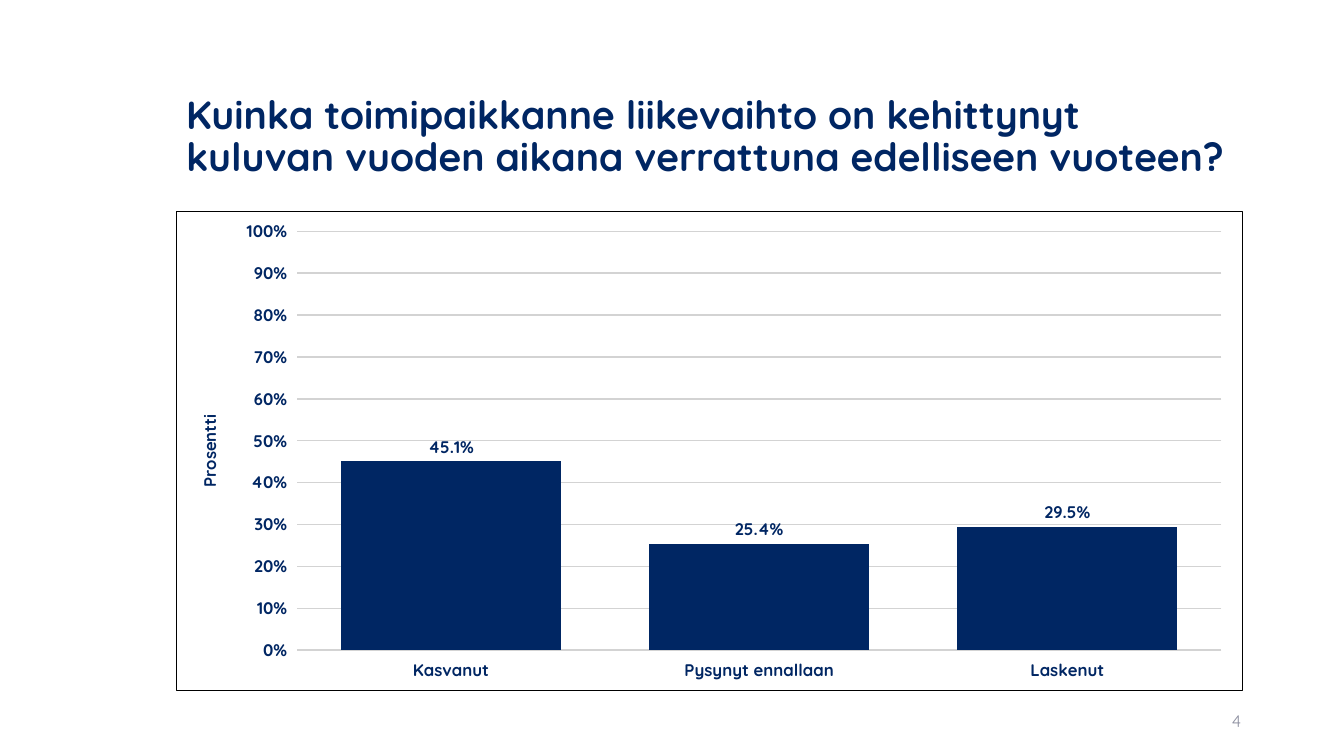
from lxml.etree import fromstring
from pptx import Presentation
from pptx.chart.data import CategoryChartData
from pptx.dml.color import RGBColor
from pptx.enum.chart import XL_CHART_TYPE, XL_LABEL_POSITION, XL_TICK_MARK
from pptx.enum.text import MSO_ANCHOR, MSO_AUTO_SIZE, PP_ALIGN
from pptx.oxml.ns import nsdecls
from pptx.util import Inches, Pt

NAVY = RGBColor(0x00, 0x26, 0x63)
GRAY = RGBColor(0x8C, 0x8E, 0x9F)
GRID_GRAY = RGBColor(0xD3, 0xD3, 0xD3)
WHITE = RGBColor(0xFF, 0xFF, 0xFF)
BLACK = RGBColor(0x00, 0x00, 0x00)

# Shares of the slide's size
LEFT, CONTENT_WIDTH = 0.131, 0.794
TITLE_TOP, TITLE_HEIGHT = 0.085, 0.194
CHART_TOP, CHART_HEIGHT = 0.279, 0.635
NUMBER_BOX = (0.706, 0.927, 0.225, 0.053)


def format_font(font, size=12, color=NAVY, bold=True, name="Quicksand"):
    font.name, font.size, font.bold = name, Pt(size), bold
    font.color.rgb = color


def write_text(frame, text, align=PP_ALIGN.LEFT, line_spacing=1.0, **font_format):
    frame.word_wrap = True
    frame.auto_size = MSO_AUTO_SIZE.NONE
    frame.vertical_anchor = MSO_ANCHOR.MIDDLE
    paragraph = frame.paragraphs[0]
    paragraph.alignment = align
    paragraph.line_spacing = line_spacing
    run = paragraph.add_run()
    run.text = text
    format_font(run.font, **font_format)


def area_properties(fill, line=None, width=0.5):
    """Fill and border element for a chart area or a plot area."""
    solid = '<a:solidFill><a:srgbClr val="{}"/></a:solidFill>'
    outline = solid.format(line) if line is not None else "<a:noFill/>"
    return fromstring(
        f'<c:spPr {nsdecls("c", "a")}>{solid.format(fill)}'
        f'<a:ln w="{int(Pt(width))}">{outline}</a:ln></c:spPr>'
    )


class SlideBuilder:
    def __init__(self, presentation):
        self.width = presentation.slide_width
        self.height = presentation.slide_height
        self.slide = presentation.slides.add_slide(presentation.slide_layouts[5])

    def box(self, left, top, width, height):
        return (int(left * self.width), int(top * self.height),
                int(width * self.width), int(height * self.height))

    def title(self, text, *shares):
        shape = self.slide.shapes.title
        shape.left, shape.top, shape.width, shape.height = self.box(*shares)
        write_text(shape.text_frame, text, line_spacing=0.9, size=28)

    def page_number(self, text, *shares):
        shape = self.slide.shapes.add_textbox(*self.box(*shares))
        write_text(shape.text_frame, text, align=PP_ALIGN.RIGHT, color=GRAY, bold=False)

    def column_chart(self, values, axis_title, *shares):
        data = CategoryChartData(number_format="0.0%")
        data.categories = list(values)
        data.add_series("Series 1", list(values.values()))
        chart = self.slide.shapes.add_chart(
            XL_CHART_TYPE.COLUMN_CLUSTERED, *self.box(*shares), data).chart
        chart.has_title = chart.has_legend = False
        format_font(chart.font)

        # Columns and their labels
        plot = chart.plots[0]
        plot.gap_width, plot.overlap = 40, -2
        plot.vary_by_categories = False
        fill = plot.series[0].format.fill
        fill.solid()
        fill.fore_color.rgb = NAVY
        plot.has_data_labels = True
        labels = plot.data_labels
        labels.show_value = True
        labels.number_format, labels.number_format_is_linked = "0.0%", False
        labels.position = XL_LABEL_POSITION.OUTSIDE_END
        format_font(labels.font)

        # Axes
        for axis in (chart.category_axis, chart.value_axis):
            axis.major_tick_mark = XL_TICK_MARK.OUTSIDE
            axis.format.line.fill.background()
            format_font(axis.tick_labels.font)
        axis = chart.value_axis
        axis.minimum_scale, axis.maximum_scale, axis.major_unit = 0, 1, 0.1
        axis.tick_labels.number_format = "0%"
        axis.tick_labels.number_format_is_linked = False
        axis.has_major_gridlines = True
        grid_line = axis.major_gridlines.format.line
        grid_line.color.rgb, grid_line.width = GRID_GRAY, Pt(1)
        title_frame = axis.axis_title.text_frame
        title_frame.text = axis_title
        format_font(title_frame.paragraphs[0].runs[0].font)

        # Plot background and chart border
        chart_element = chart.element.chart
        chart_element.plotArea.append(area_properties(WHITE))
        chart_element.addnext(area_properties(WHITE, BLACK))


def main():
    presentation = Presentation()
    presentation.slide_width, presentation.slide_height = Inches(13.33), Inches(7.5)
    builder = SlideBuilder(presentation)
    builder.title(
        "Kuinka toimipaikkanne liikevaihto on kehittynyt kuluvan vuoden aikana "
        "verrattuna edelliseen vuoteen?",
        LEFT, TITLE_TOP, CONTENT_WIDTH, TITLE_HEIGHT)
    builder.column_chart(
        {"Kasvanut": 0.451, "Pysynyt ennallaan": 0.254, "Laskenut": 0.295},
        "Prosentti", LEFT, CHART_TOP, CONTENT_WIDTH, CHART_HEIGHT)
    builder.page_number("4", *NUMBER_BOX)
    presentation.save("out.pptx")


if __name__ == "__main__":
    main()
